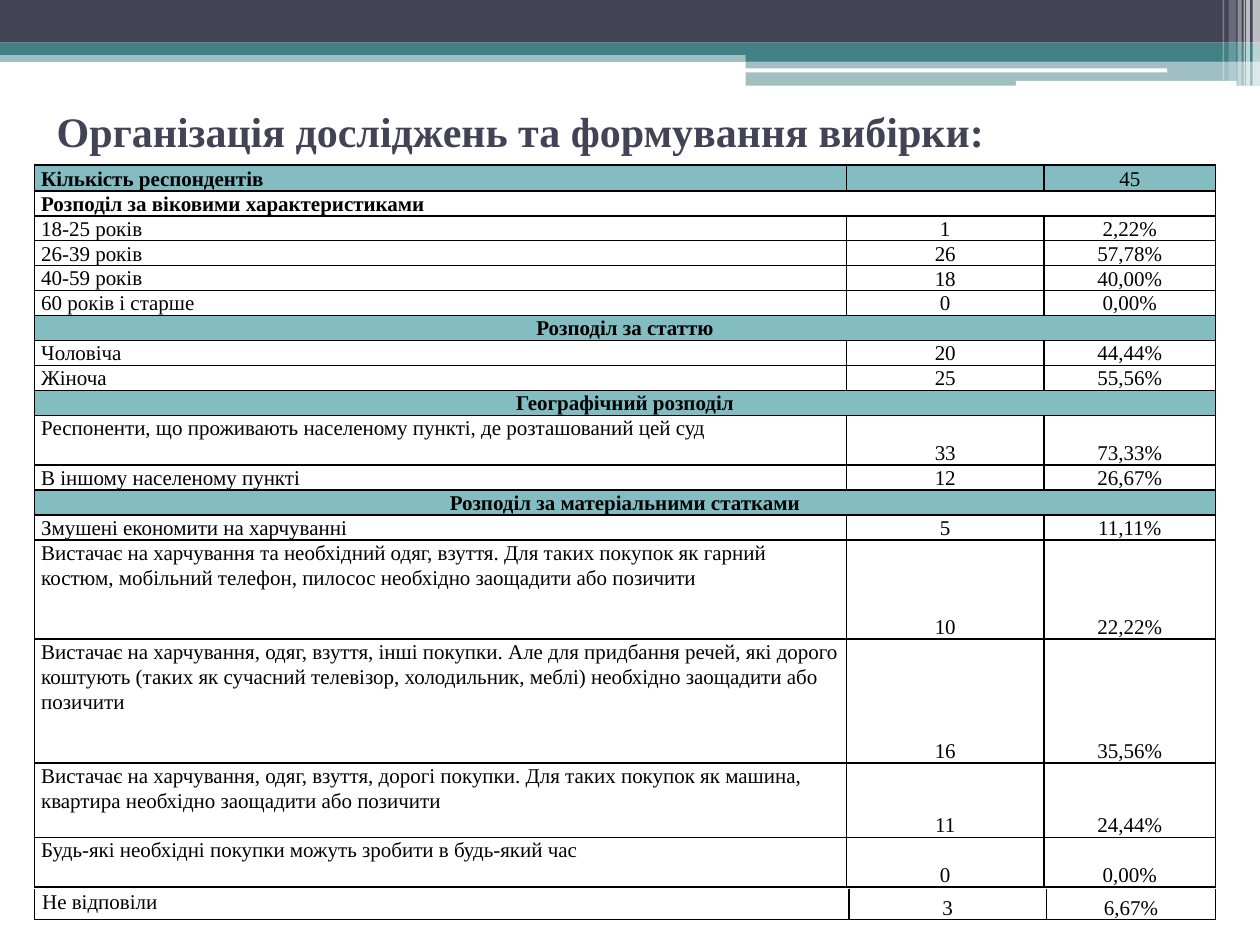
from lxml import etree
from pptx import Presentation
from pptx.dml.color import RGBColor
from pptx.enum.shapes import MSO_SHAPE
from pptx.enum.text import MSO_ANCHOR, PP_ALIGN
from pptx.oxml.ns import qn
from pptx.util import Cm, Pt

RECT, ROUNDED = MSO_SHAPE.RECTANGLE, MSO_SHAPE.ROUNDED_RECTANGLE
LEFT, CENTER = PP_ALIGN.LEFT, PP_ALIGN.CENTER
TOP, BOTTOM = MSO_ANCHOR.TOP, MSO_ANCHOR.BOTTOM

COLORS = {"navy": "424456", "teal": "438086", "band": "83BCC1",
          "white": "FFFFFF", "black": "000000"}
FONT = "Times New Roman"
LINE_HEIGHT = 0.5
SIDES = {"left": "a:lnL", "right": "a:lnR", "top": "a:lnT", "bottom": "a:lnB"}

# shape, left, top, width, height (cm), colour, opacity in percent
BARS = [
    (RECT, 0, 1.02, 25.4, 0.23, "teal", 50),
    (RECT, 0, 0, 25.4, 0.86, "navy", 100),
    (RECT, 0, 0.86, 25.4, 0.25, "teal", 100),
    (RECT, 15.03, 1, 10.37, 0.24, "teal", 100),
    (RECT, 15.03, 1.23, 10.37, 0.5, "teal", 50),
    (ROUNDED, 15.02, 1.38, 8.51, 0.08, "white", 100),
    (ROUNDED, 20.48, 1.63, 4.45, 0.1, "white", 100),
]
# left, width, height (cm), opacity in percent
STRIPES = [
    (25.25, 0.15, 1.73, 65), (25.12, 0.08, 1.73, 65), (25.07, 0.03, 1.73, 60),
    (24.95, 0.08, 1.73, 40), (24.77, 0.15, 1.63, 20), (24.65, 0.03, 1.63, 30),
]

# kind, lines of height, texts
SURVEY_ROWS = [
    ("total", 1, ["Кількість респондентів", "", "45"]),
    ("plain heading", 1, ["Розподіл за віковими характеристиками"]),
    ("data", 1, ["18-25 років", "1", "2,22%"]),
    ("data", 1, ["26-39 років", "26", "57,78%"]),
    ("data", 1, ["40-59 років", "18", "40,00%"]),
    ("data", 1, ["60 років і старше", "0", "0,00%"]),
    ("heading", 1, ["Розподіл за статтю"]),
    ("data", 1, ["Чоловіча", "20", "44,44%"]),
    ("data", 1, ["Жіноча", "25", "55,56%"]),
    ("heading", 1, ["Географічний розподіл"]),
    ("data", 2, ["Респоненти, що проживають населеному пункті, де розташований цей суд",
                 "33", "73,33%"]),
    ("data", 1, ["В іншому населеному пункті", "12", "26,67%"]),
    ("heading", 1, ["Розподіл за матеріальними статками"]),
    ("data", 1, ["Змушені економити на харчуванні", "5", "11,11%"]),
    ("data", 4, ["Вистачає на харчування та необхідний одяг, взуття. Для таких покупок як "
                 "гарний костюм, мобільний телефон, пилосос необхідно заощадити або позичити",
                 "10", "22,22%"]),
    ("data", 5, ["Вистачає на харчування, одяг, взуття, інші покупки. Але для придбання "
                 "речей, які дорого коштують (таких як сучасний телевізор, холодильник, "
                 "меблі) необхідно заощадити або позичити", "16", "35,56%"]),
    ("data", 3, ["Вистачає на харчування, одяг, взуття, дорогі покупки. Для таких покупок "
                 "як машина, квартира необхідно заощадити або позичити", "11", "24,44%"]),
    ("data", 2, ["Будь-які необхідні покупки можуть зробити в будь-який час",
                 "0", "0,00%"]),
]
NO_ANSWER_ROWS = [("data", 1.22, ["Не відповіли", "3", "6,67%"])]


def set_values(target, values):
    for name, value in values.items():
        setattr(target, name, value)


def color(name):
    return RGBColor.from_string(COLORS[name])


def add_bar(page, kind, left, top, width, height, fill, opacity):
    bar = page.shapes.add_shape(kind, Cm(left), Cm(top), Cm(width), Cm(height))
    bar.shadow.inherit = False
    bar.line.fill.background()
    bar.fill.solid()
    bar.fill.fore_color.rgb = color(fill)
    if opacity < 100:
        tint = bar.fill._xPr.find(".//" + qn("a:srgbClr"))
        etree.SubElement(tint, qn("a:alpha"), val=str(opacity * 1000))


def write_text(frame, text, size, bold, shade, align, spacing):
    para = frame.paragraphs[0]
    set_values(para, {"alignment": align, "line_spacing": spacing})
    if text:
        span = para.add_run()
        span.text = text
        set_values(span.font, {"name": FONT, "size": Pt(size), "bold": bold})
        span.font.color.rgb = color(shade)
    else:
        para._p.get_or_add_endParaRPr().set("sz", str(size * 100))


def set_title(page, text):
    title = page.shapes.title
    set_values(title, {"left": Cm(0.89), "top": Cm(1.73),
                       "width": Cm(25.2), "height": Cm(2.97)})
    set_values(title.text_frame, {"word_wrap": True, "vertical_anchor": TOP,
                                  "margin_top": Cm(0.4)})
    write_text(title.text_frame, text, 24, True, "navy", LEFT, 1.0)


def set_borders(cell, sides):
    properties = cell._tc.get_or_add_tcPr()
    for side, tag in SIDES.items():
        line = etree.SubElement(properties, qn(tag), w=str(Pt(1)))
        if side in sides:
            fill = etree.SubElement(line, qn("a:solidFill"))
            etree.SubElement(fill, qn("a:srgbClr"), val=COLORS["black"])
        else:
            etree.SubElement(line, qn("a:noFill"))


def format_cell(cell, text, kind, column, inset, sides):
    set_borders(cell, sides)
    if kind in ("total", "heading"):
        cell.fill.solid()
        cell.fill.fore_color.rgb = color("band")
    else:
        cell.fill.background()
    is_label = column == 0
    set_values(cell, {
        "margin_left": Cm(inset), "margin_right": Cm(inset),
        "margin_top": 0, "margin_bottom": 0,
        "vertical_anchor": TOP if is_label and kind == "data" else BOTTOM})
    align = LEFT if is_label and kind != "heading" else CENTER
    write_text(cell.text_frame, text, 12, is_label and kind != "data",
               "black", align, 1.07)


def add_survey_table(page, top, widths, rows, inset, sides):
    """Add a table whose heading rows span all columns."""
    heights = [lines * LINE_HEIGHT for _, lines, _ in rows]
    table = page.shapes.add_table(len(rows), len(widths), Cm(0.7), Cm(top),
                                  Cm(sum(widths)), Cm(sum(heights))).table
    set_values(table, {"first_row": False, "horz_banding": False})
    for column, width in zip(table.columns, widths):
        column.width = Cm(width)
    for index, (kind, _, texts) in enumerate(rows):
        table.rows[index].height = Cm(heights[index])
        padded = texts + [""] * (len(widths) - len(texts))
        for column, text in enumerate(padded):
            format_cell(table.cell(index, column), text, kind, column, inset, sides)
        if len(texts) == 1:
            table.cell(index, 0).merge(table.cell(index, len(widths) - 1))


def main():
    deck = Presentation()
    set_values(deck, {"slide_width": Cm(25.4), "slide_height": Cm(19.05)})
    page = deck.slides.add_slide(deck.slide_layouts[5])
    for bar in BARS:
        add_bar(page, *bar)
    for left, width, height, opacity in STRIPES:
        add_bar(page, RECT, left, 0, width, height, "white", opacity)
    set_title(page, "Організація досліджень та формування вибірки:")
    add_survey_table(page, 3.33, [16.36, 3.99, 3.45], SURVEY_ROWS, 0.13, list(SIDES))
    add_survey_table(page, 17.93, [16.41, 3.99, 3.4], NO_ANSWER_ROWS, 0.15,
                     ["left", "right", "bottom"])
    deck.save("out.pptx")


if __name__ == "__main__":
    main()
